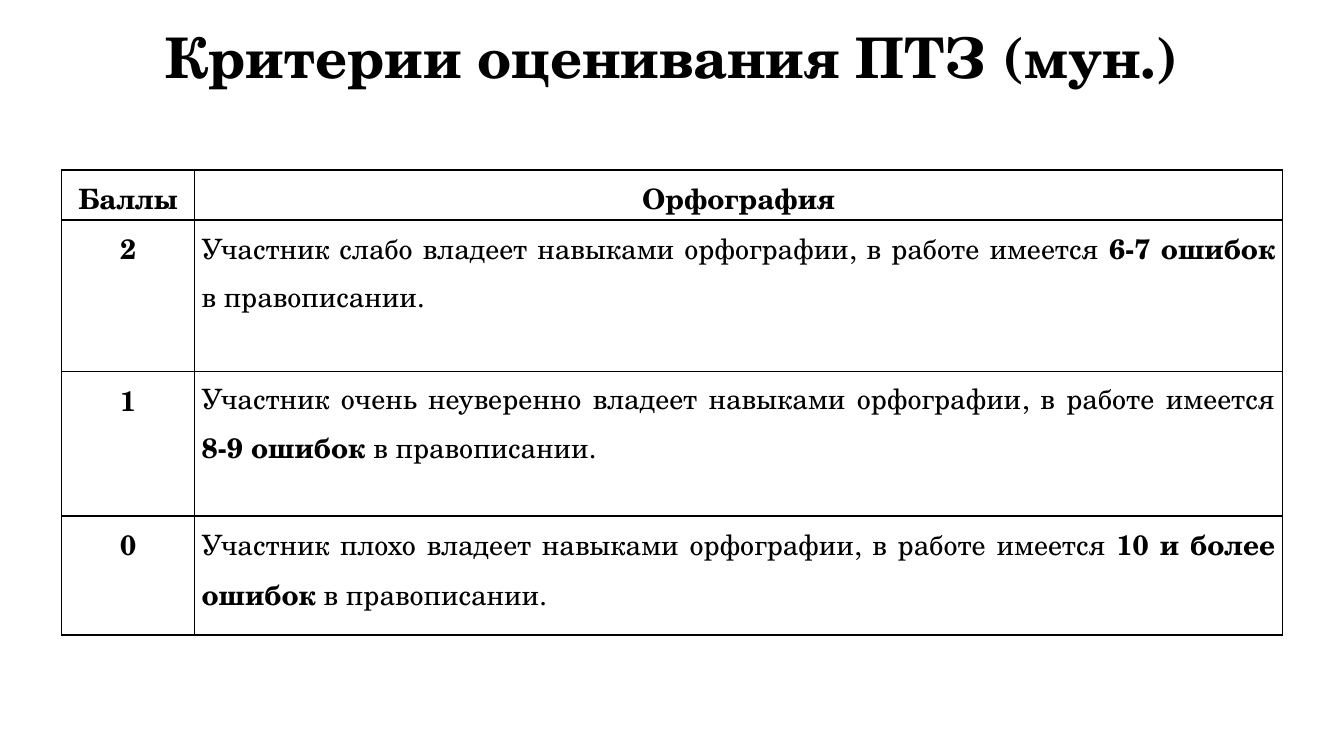
"""Build a slide with the spelling assessment criteria table."""
import pptx
import pptx.dml.color
import pptx.enum.text
import pptx.oxml
import pptx.oxml.ns
import pptx.util

Pt = pptx.util.Pt
RGBColor = pptx.dml.color.RGBColor
ALIGN = pptx.enum.text.PP_ALIGN
ANCHOR = pptx.enum.text.MSO_ANCHOR
FONT = "TeX Gyre Schola"
COLORS = {"text": "000000", "border": "000000", "fill": "FFFFFF"}


def format_run(run, size, bold):
    run.font.name = FONT
    run.font.size = Pt(size)
    run.font.bold = bold
    run.font.color.rgb = RGBColor.from_string(COLORS["text"])


def add_borders(cell):
    properties = cell._tc.get_or_add_tcPr()
    for position, side in enumerate(("lnL", "lnR", "lnT", "lnB")):
        line = pptx.oxml.parse_xml(
            f'<a:{side} {pptx.oxml.ns.nsdecls("a")} w="{Pt(1)}"><a:solidFill>'
            f'<a:srgbClr val="{COLORS["border"]}"/></a:solidFill></a:{side}>'
        )
        properties.insert(position, line)


presentation = pptx.Presentation()
presentation.slide_width = Pt(960)
presentation.slide_height = Pt(540)
slide = presentation.slides.add_slide(presentation.slide_layouts[5])

title = slide.shapes.title
title.left, title.top, title.width, title.height = Pt(66), Pt(15), Pt(828), Pt(56)
title.text_frame.text = "Критерии оценивания ПТЗ (мун.)"
title.text_frame.vertical_anchor = ANCHOR.MIDDLE
title_paragraph = title.text_frame.paragraphs[0]
title_paragraph.alignment = ALIGN.CENTER
title_paragraph.line_spacing = 0.9
format_run(title_paragraph.runs[0], 40, True)

criteria = [
    ("Баллы", [("Орфография", True)]),
    ("2", [("Участник слабо владеет навыками орфографии, в работе имеется ", False),
           ("6-7 ошибок ", True), ("в правописании.", False)]),
    ("1", [("Участник очень неуверенно владеет навыками орфографии, в работе имеется ", False),
           ("8-9 ошибок", True), (" в правописании.", False)]),
    ("0", [("Участник плохо владеет навыками орфографии, в работе имеется ", False),
           ("10 и более ошибок", True), (" в правописании.", False)]),
]
column_widths = [95, 777]
row_heights = [31, 108.5, 103, 85]

table = slide.shapes.add_table(
    len(criteria), len(column_widths), Pt(44), Pt(121.5),
    Pt(sum(column_widths)), Pt(sum(row_heights)),
).table
table.horz_banding = False
for column, width in zip(table.columns, column_widths):
    column.width = Pt(width)

for row_index, (score, description) in enumerate(criteria):
    table.rows[row_index].height = Pt(row_heights[row_index])
    for column_index, parts in enumerate(([(score, True)], description)):
        cell = table.cell(row_index, column_index)
        cell.margin_left = cell.margin_right = Pt(5)
        cell.margin_top = cell.margin_bottom = Pt(0)
        cell.vertical_anchor = ANCHOR.TOP
        cell.fill.solid()
        cell.fill.fore_color.rgb = RGBColor.from_string(COLORS["fill"])
        add_borders(cell)
        paragraph = cell.text_frame.paragraphs[0]
        justified = row_index > 0 and column_index == 1
        paragraph.alignment = ALIGN.JUSTIFY if justified else ALIGN.CENTER
        paragraph.line_spacing = 1.15
        paragraph.space_after = Pt(2)
        for text, bold in parts:
            run = paragraph.add_run()
            run.text = text
            format_run(run, 20, bold)

presentation.save("out.pptx")
